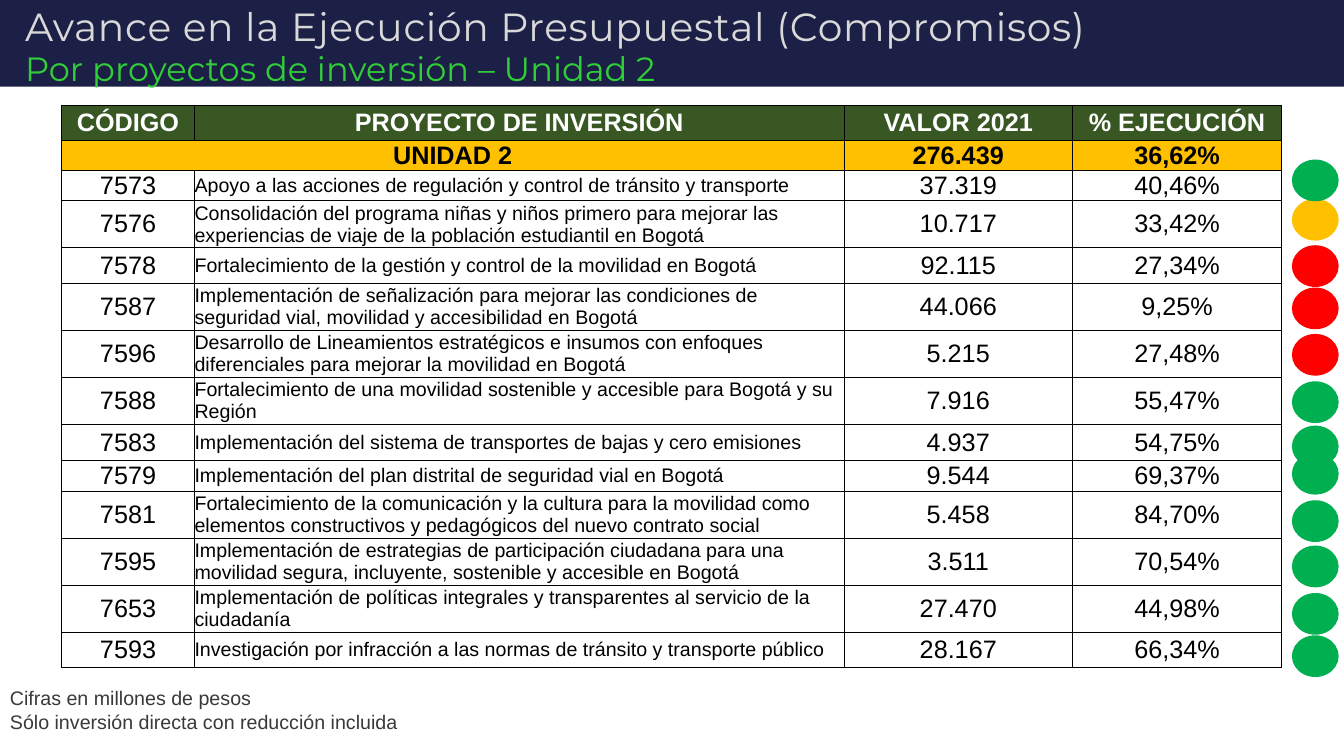
import pptx
import pptx.util
import pptx.dml.color
import pptx.enum.shapes
import pptx.enum.text
import pptx.oxml
import pptx.oxml.ns

Inches = pptx.util.Inches
Pt = pptx.util.Pt
RGBColor = pptx.dml.color.RGBColor
MSO_SHAPE = pptx.enum.shapes.MSO_SHAPE
MSO_ANCHOR = pptx.enum.text.MSO_ANCHOR
PP_ALIGN = pptx.enum.text.PP_ALIGN

NAVY = RGBColor(0x1C, 0x20, 0x46)
LIME = RGBColor(0x31, 0xCE, 0x39)
LIGHT_GRAY = RGBColor(0xD9, 0xD9, 0xD9)
DARK_GRAY = RGBColor(0x3B, 0x38, 0x38)
DARK_GREEN = RGBColor(0x38, 0x57, 0x23)
WHITE = RGBColor(0xFF, 0xFF, 0xFF)
BLACK = RGBColor(0x00, 0x00, 0x00)
GREEN = RGBColor(0x00, 0xB0, 0x50)
AMBER = RGBColor(0xFF, 0xC0, 0x00)
RED = RGBColor(0xFF, 0x00, 0x00)

HEADERS = ["CÓDIGO", "PROYECTO DE INVERSIÓN", "VALOR 2021", "% EJECUCIÓN"]
TOTAL = ["UNIDAD 2", "", "276.439", "36,62%"]
COLUMN_WIDTHS = [1.32, 6.44, 2.27, 2.07]
HEADER_HEIGHT, TOTAL_HEIGHT = 0.35, 0.23

# Code, project, value, execution, row height, top of its light
PROJECTS = [
    ("7573", "Apoyo a las acciones de regulación y control de tránsito y transporte",
     "37.319", "40,46%", 0.23, 1.59),
    ("7576", "Consolidación del programa niñas y niños primero para mejorar las "
     "experiencias de viaje de la población estudiantil en Bogotá",
     "10.717", "33,42%", 0.46, 1.98),
    ("7578", "Fortalecimiento de la gestión y control de la movilidad en Bogotá",
     "92.115", "27,34%", 0.35, 2.44),
    ("7587", "Implementación de señalización para mejorar las condiciones de "
     "seguridad vial, movilidad y accesibilidad en Bogotá",
     "44.066", "9,25%", 0.46, 2.86),
    ("7596", "Desarrollo de Lineamientos estratégicos e insumos con enfoques "
     "diferenciales para mejorar la movilidad en Bogotá",
     "5.215", "27,48%", 0.46, 3.32),
    ("7588", "Fortalecimiento de una movilidad sostenible y accesible para Bogotá y su Región",
     "7.916", "55,47%", 0.46, 3.79),
    ("7583", "Implementación del sistema de transportes de bajas y cero emisiones",
     "4.937", "54,75%", 0.36, 4.23),
    ("7579", "Implementación del plan distrital de seguridad vial en Bogotá",
     "9.544", "69,37%", 0.23, 4.5),
    ("7581", "Fortalecimiento de la comunicación y la cultura para la movilidad como "
     "elementos constructivos y pedagógicos del nuevo contrato social",
     "5.458", "84,70%", 0.46, 4.97),
    ("7595", "Implementación de estrategias de participación ciudadana para una "
     "movilidad segura, incluyente, sostenible y accesible en Bogotá",
     "3.511", "70,54%", 0.46, 5.42),
    ("7653", "Implementación de políticas integrales y transparentes al servicio de la ciudadanía",
     "27.470", "44,98%", 0.46, 5.89),
    ("7593", "Investigación por infracción a las normas de tránsito y transporte público",
     "28.167", "66,34%", 0.35, 6.31),
]


def add_run(p, text, size, color, font="Arial", bold=False):
    r = p.add_run()
    r.text = text
    r.font.name = font
    r.font.size = Pt(size)
    r.font.bold = bold
    r.font.color.rgb = color
    return r


def add_shape(s, kind, left, top, width, height, color):
    sp = s.shapes.add_shape(kind, Inches(left), Inches(top), Inches(width), Inches(height))
    sp.shadow.inherit = False
    sp.fill.solid()
    sp.fill.fore_color.rgb = color
    return sp


def add_heading(s, text, top, width, height, size, color, spacing=0):
    sp = s.shapes.add_textbox(Inches(0.25), Inches(top), Inches(width), Inches(height))
    tf = sp.text_frame
    tf.word_wrap = True
    tf.vertical_anchor = MSO_ANCHOR.MIDDLE
    tf.margin_left = tf.margin_right = tf.margin_bottom = 0
    tf.margin_top = Inches(0.01)
    p = tf.paragraphs[0]
    r = add_run(p, text, size, color, "Montserrat")
    if spacing:
        p.line_spacing = 0.9
        r.font._element.set("spc", str(spacing))


def add_borders(cell):
    tc_pr = cell._tc.get_or_add_tcPr()
    for i, side in enumerate(("lnL", "lnR", "lnT", "lnB")):
        tc_pr.insert(i, pptx.oxml.parse_xml(
            f'<a:{side} {pptx.oxml.ns.nsdecls("a")} w="6350"><a:solidFill>'
            f'<a:srgbClr val="{BLACK}"/></a:solidFill></a:{side}>'))


def fill_cell(cell, text, size=18, color=BLACK, bold=False, fill=None, align=PP_ALIGN.CENTER):
    cell.margin_left = cell.margin_right = cell.margin_top = cell.margin_bottom = 0
    cell.vertical_anchor = MSO_ANCHOR.MIDDLE
    if fill is None:
        cell.fill.background()
    else:
        cell.fill.solid()
        cell.fill.fore_color.rgb = fill
    add_borders(cell)
    if text:
        p = cell.text_frame.paragraphs[0]
        p.alignment = align
        add_run(p, text, size, color, bold=bold)


def add_budget_table(s):
    heights = [HEADER_HEIGHT, TOTAL_HEIGHT] + [project[4] for project in PROJECTS]
    table = s.shapes.add_table(
        len(heights), len(HEADERS), Inches(0.61), Inches(1.04),
        Inches(sum(COLUMN_WIDTHS)), Inches(sum(heights))).table
    table.first_row = table.horz_banding = False
    for column, width in zip(table.columns, COLUMN_WIDTHS):
        column.width = Inches(width)
    for row, height in zip(table.rows, heights):
        row.height = Inches(height)

    table.cell(1, 0).merge(table.cell(1, 1))
    for c, (header, total) in enumerate(zip(HEADERS, TOTAL)):
        fill_cell(table.cell(0, c), header, color=WHITE, bold=True, fill=DARK_GREEN)
        fill_cell(table.cell(1, c), total, bold=True, fill=AMBER)
    for r, project in enumerate(PROJECTS, start=2):
        for c, text in enumerate(project[:4]):
            if c == 1:
                fill_cell(table.cell(r, c), text, size=14, align=PP_ALIGN.LEFT)
            else:
                fill_cell(table.cell(r, c), text)


def light_color(execution):
    percent = float(execution.rstrip("%").replace(",", "."))
    if percent >= 40:
        return GREEN
    return AMBER if percent >= 30 else RED


def add_light(s, top, color):
    sp = add_shape(s, MSO_SHAPE.OVAL, 12.82, top, 0.45, 0.4, color)
    sp.line.color.rgb = color
    sp.line.width = Pt(1)


def add_footnote(s, lines):
    sp = s.shapes.add_textbox(Inches(0), Inches(6.76), Inches(6.95), Inches(0.57))
    tf = sp.text_frame
    tf.word_wrap = True
    for i, line in enumerate(lines):
        p = tf.add_paragraph() if i else tf.paragraphs[0]
        add_run(p, line, 14, DARK_GRAY)


def main():
    prs = pptx.Presentation()
    prs.slide_width, prs.slide_height = Inches(13.33), Inches(7.5)
    s = prs.slides.add_slide(prs.slide_layouts[6])

    # Banner and headings
    banner = add_shape(s, MSO_SHAPE.RECTANGLE, 0, 0, 13.33, 0.86, NAVY)
    banner.line.fill.background()
    add_heading(s, "Por proyectos de inversión – Unidad 2", 0.46, 12.66, 0.42, 24, LIME)
    add_heading(s, "Avance en la Ejecución Presupuestal (Compromisos)",
                0.06, 12.44, 0.44, 28, LIGHT_GRAY, spacing=50)

    # Table and notes
    add_budget_table(s)
    add_footnote(s, ["Cifras en millones de pesos",
                     "Sólo inversión directa con reducción incluida"])

    # Status lights, from the bottom up so that upper ones overlap lower ones
    for project in reversed(PROJECTS):
        add_light(s, project[5], light_color(project[3]))

    prs.save("out.pptx")


if __name__ == "__main__":
    main()
